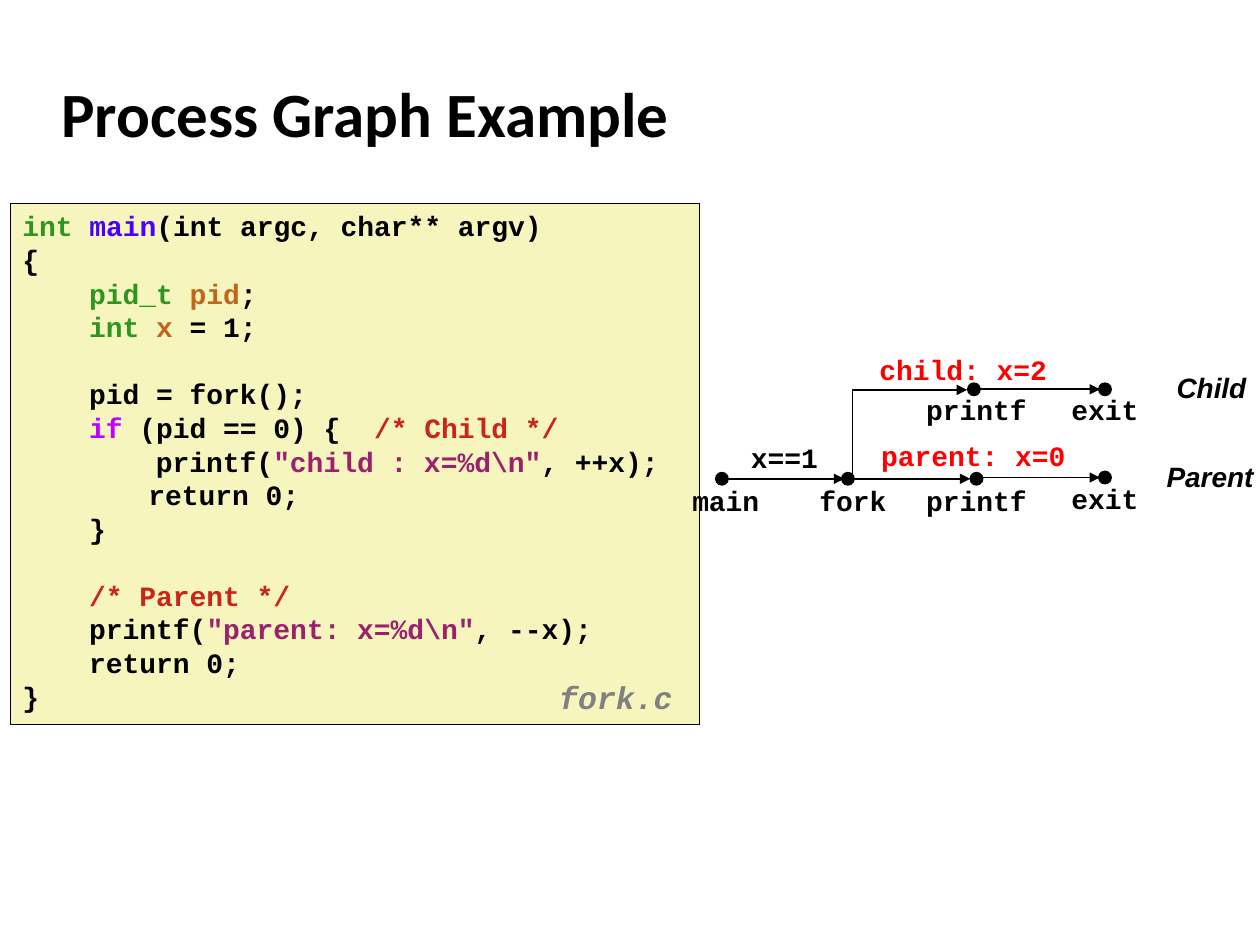
from lxml import etree
from pptx import Presentation
from pptx.dml.color import RGBColor
from pptx.enum import shapes, text
from pptx.oxml.ns import qn
from pptx.util import Inches, Pt

COLORS = {
    "black": "000000", "paper": "F6F5BD", "type": "2D961E",
    "function": "4A00FF", "variable": "C1651C", "keyword": "C200FF",
    "comment": "CB2418", "string": "9D206F", "value": "FF0000",
    "file": "808080",
}
MONO = {"name": "Courier New", "size": Pt(16), "bold": True}
SIDE = {"name": "Arial", "size": Pt(16), "bold": True, "italic": True}
FILE = {"name": "Courier New", "size": Pt(18), "bold": True, "italic": True}
TITLE = {"name": "Calibri", "size": Pt(36), "bold": True}

LINE_HEIGHT = Pt(19.2)
STEP = 0.53
# Each line: indent in inches, blank lines before it, (text, color) runs
CODE = [
    (0, 0, [("int ", "type"), ("main", "function"),
            ("(int argc, char** argv)", "black")]),
    (0, 0, [("{", "black")]),
    (STEP, 0, [("pid_t ", "type"), ("pid", "variable"), (";", "black")]),
    (STEP, 0, [("int ", "type"), ("x", "variable"), (" = 1;", "black")]),
    (STEP, 1, [("pid = fork();", "black")]),
    (STEP, 0, [("if", "keyword"), (" (pid == 0) {  ", "black"),
               ("/* Child */", "comment")]),
    (2 * STEP, 0, [("printf(", "black"), ('"child : x=%d\\n"', "string"),
                   (", ++x);", "black")]),
    (1, 0, [("return 0;", "black")]),
    (STEP, 0, [("}", "black")]),
    (STEP, 1, [("/* Parent */", "comment")]),
    (STEP, 0, [("printf(", "black"), ('"parent: x=%d\\n"', "string"),
               (", --x);", "black")]),
    (STEP, 0, [("return 0;", "black")]),
    (0, 0, [("}", "black")]),
]

DOT = 0.1
CHILD_Y, PARENT_Y = 3.09, 3.8
EVENTS = [(5.73, PARENT_Y), (6.73, PARENT_Y), (7.75, PARENT_Y),
          (8.77, PARENT_Y - 0.01), (7.73, CHILD_Y), (8.77, CHILD_Y)]
ARROWS = [(5.78, 6.7, PARENT_Y), (6.78, 7.7, PARENT_Y),
          (7.77, 8.73, PARENT_Y - 0.01), (7.77, 8.73, CHILD_Y)]
# Text, left, top, width, color
GRAPH_LABELS = [
    ("main", 5.39, 3.79, 0.74, "black"),
    ("fork", 6.37, 3.79, 0.8, "black"),
    ("printf", 7.23, 3.79, 1.04, "black"),
    ("exit", 8.25, 3.77, 1.04, "black"),
    ("printf", 7.23, 3.07, 1.04, "black"),
    ("exit", 8.25, 3.07, 1.04, "black"),
    ("x==1", 5.79, 3.45, 0.87, "black"),
    ("child: x=2", 6.64, 2.75, 2.01, "value"),
    ("parent: x=0", 6.72, 3.43, 2.01, "value"),
]


def rgb(color):
    return RGBColor.from_string(COLORS[color])


def add_run(paragraph, words, style, color):
    run = paragraph.add_run()
    run.text = words
    for attribute, value in style.items():
        setattr(run.font, attribute, value)
    run.font.color.rgb = rgb(color)


def add_label(slide, words, box, style, color="black", align="LEFT",
              wrap=False, anchor="TOP", spacing=None):
    frame = slide.shapes.add_textbox(*map(Inches, box)).text_frame
    frame.word_wrap = wrap
    frame.vertical_anchor = text.MSO_ANCHOR[anchor]
    paragraph = frame.paragraphs[0]
    paragraph.alignment = text.PP_ALIGN[align]
    paragraph.line_spacing = spacing
    add_run(paragraph, words, style, color)


def add_filled(slide, preset, box, fill, width):
    shape = slide.shapes.add_shape(preset, *map(Inches, box))
    shape.shadow.inherit = False
    shape.fill.solid()
    shape.fill.fore_color.rgb = rgb(fill)
    shape.line.color.rgb = rgb("black")
    shape.line.width = Pt(width)
    return shape


def add_code(slide):
    panel = add_filled(slide, shapes.MSO_SHAPE.RECTANGLE,
                       (0.08, 1.61, 5.47, 4.14), "paper", 0.25)
    frame = panel.text_frame
    frame.word_wrap = False
    frame.vertical_anchor = text.MSO_ANCHOR.TOP
    for number, (indent, blanks, runs) in enumerate(CODE):
        line = frame.add_paragraph() if number else frame.paragraphs[0]
        line.alignment = text.PP_ALIGN.LEFT
        line.space_before = blanks * LINE_HEIGHT
        line._p.get_or_add_pPr().set("marL", str(Inches(indent)))
        for words, color in runs:
            add_run(line, words, MONO, color)


def add_arrow(slide, kind, *ends):
    arrow = slide.shapes.add_connector(kind, *map(Inches, ends))
    arrow.line.color.rgb = rgb("black")
    arrow.line.width = Pt(1)
    etree.SubElement(arrow.line._get_or_add_ln(), qn("a:tailEnd"),
                     type="triangle")
    etree.SubElement(arrow._element.spPr, qn("a:effectLst"))
    return arrow


def add_fork_branch(slide):
    """Arrow that rises from fork, then turns right to the child's printf."""
    branch = add_arrow(slide, shapes.MSO_CONNECTOR.ELBOW,
                       7.57, 3.9, 6.87, 2.99)
    properties = branch._element.spPr
    properties.find(qn("a:xfrm")).set("rot", str(90 * 60000))
    properties.find(qn("a:prstGeom")).set("prst", "bentConnector2")


def add_graph(slide):
    for x, y in EVENTS:
        add_filled(slide, shapes.MSO_SHAPE.OVAL,
                   (x - DOT / 2, y - DOT / 2, DOT, DOT), "black", 0.75)
    for start, end, y in ARROWS:
        add_arrow(slide, shapes.MSO_CONNECTOR.STRAIGHT, start, y, end, y)
    add_fork_branch(slide)
    for words, left, top, width, color in GRAPH_LABELS:
        add_label(slide, words, (left, top, width, 0.37), MONO, color,
                  align="CENTER", wrap=True)
    add_label(slide, "Parent", (9.16, 3.6, 0.92, 0.37), SIDE)
    add_label(slide, "Child", (9.24, 2.89, 0.77, 0.37), SIDE)


def main():
    deck = Presentation()
    deck.slide_width, deck.slide_height = Inches(10), Inches(7.5)
    slide = deck.slides.add_slide(deck.slide_layouts[6])
    add_label(slide, "Process Graph Example", (0.39, 0.48, 8.3, 0.83), TITLE,
              wrap=True, anchor="MIDDLE")
    add_code(slide)
    add_graph(slide)
    add_label(slide, "fork.c", (4.34, 5.36, 1.17, 0.39), FILE, "file",
              spacing=0.94)
    deck.save("out.pptx")


if __name__ == "__main__":
    main()
